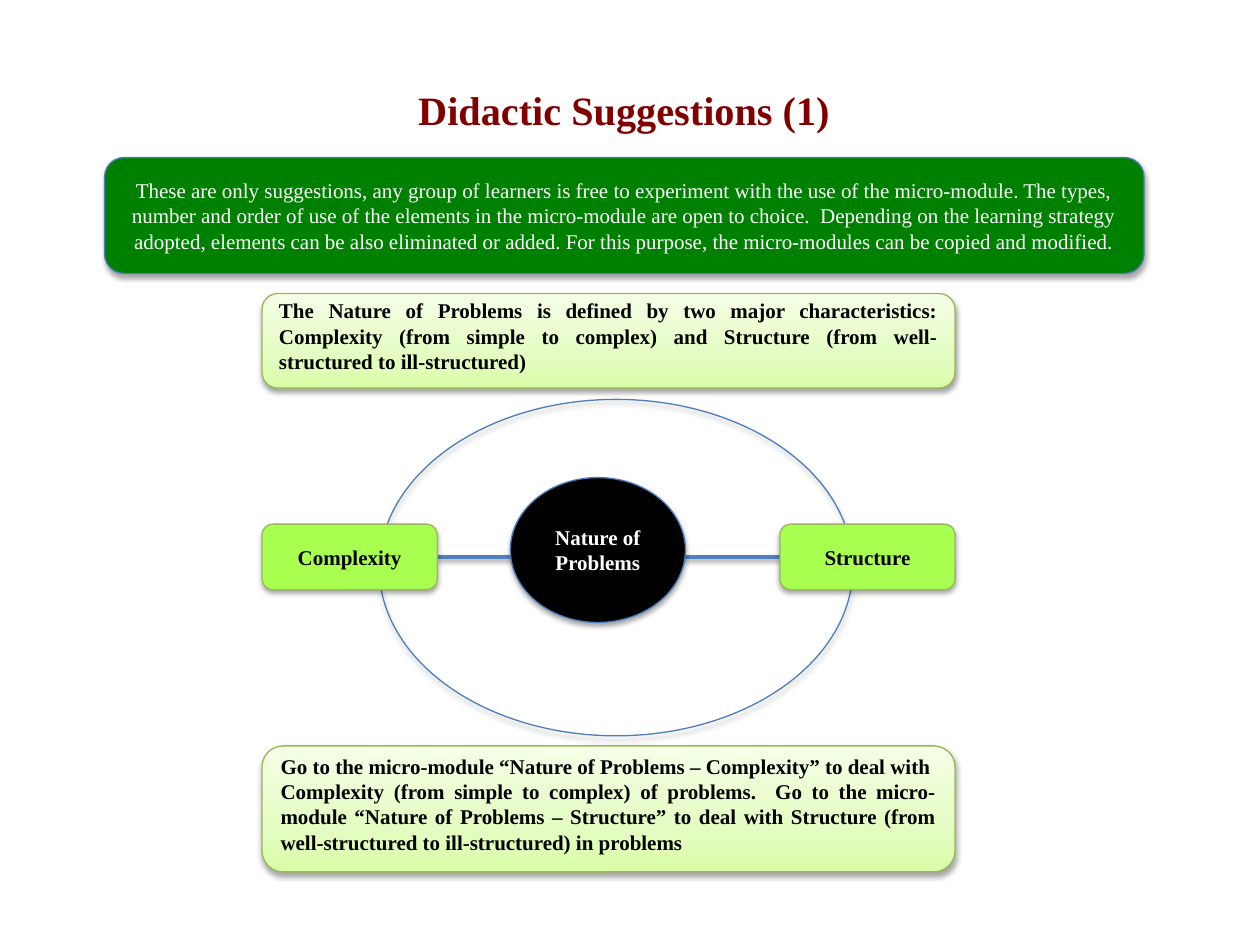
from dataclasses import dataclass

from lxml import etree
from pptx import Presentation
from pptx.dml.color import RGBColor
from pptx.enum.shapes import MSO_CONNECTOR, MSO_SHAPE
from pptx.enum.text import MSO_ANCHOR, PP_ALIGN
from pptx.oxml.ns import qn
from pptx.util import Inches, Pt

ROUNDED, OVAL = MSO_SHAPE.ROUNDED_RECTANGLE, MSO_SHAPE.OVAL
STRAIGHT = MSO_CONNECTOR.STRAIGHT
MIDDLE = MSO_ANCHOR.MIDDLE
CENTER, JUSTIFY = PP_ALIGN.CENTER, PP_ALIGN.JUSTIFY
LEFT_SIDE, RIGHT_SIDE = 1, 3


@dataclass(frozen=True)
class Theme:
    font: str = "Times New Roman"
    title_size: float = 23
    body_size: float = 12
    outline_width: float = 0.75
    link_width: float = 2
    title: str = "800000"
    notice: str = "008000"
    hub: str = "000000"
    label: str = "A8FF50"
    panel: tuple = ((0, "DAFDA7"), (35, "E4FCC2"), (100, "F5FFE7"))
    blue_outline: str = "4B7EBC"
    green_outline: str = "98B955"
    link: str = "4F81BD"
    dark_text: str = "000000"
    light_text: str = "FFFFFF"


THEME = Theme()


def rgb(value):
    return RGBColor.from_string(value)


def add_shadow(shape, opacity=35, blur=3.1, distance=1.8):
    """Give the shape a soft shadow falling straight down."""
    effects = etree.SubElement(shape._element.spPr, qn("a:effectLst"))
    shadow = etree.SubElement(
        effects, qn("a:outerShdw"), blurRad=str(Pt(blur)),
        dist=str(Pt(distance)), dir="5400000", rotWithShape="0")
    color = etree.SubElement(shadow, qn("a:srgbClr"), val="000000")
    etree.SubElement(color, qn("a:alpha"), val=str(opacity * 1000))


def fill_upward(shape, stops):
    """Fill with a gradient whose first stop lies at the bottom."""
    shape.fill.gradient()
    shape.fill.gradient_angle = 90
    stop_list = shape._element.spPr.find(".//" + qn("a:gsLst"))
    for old_stop in list(stop_list):
        stop_list.remove(old_stop)
    for position, color in stops:
        stop = etree.SubElement(stop_list, qn("a:gs"), pos=str(position * 1000))
        etree.SubElement(stop, qn("a:srgbClr"), val=color)


def write(shape, text, color, size=THEME.body_size, bold=True, align=CENTER):
    frame = shape.text_frame
    frame.word_wrap = True
    frame.vertical_anchor = MIDDLE
    frame.text = text
    paragraph = frame.paragraphs[0]
    paragraph.alignment = align
    font = paragraph.runs[0].font
    font.name, font.size, font.bold = THEME.font, Pt(size), bold
    font.color.rgb = rgb(color)


def add_outlined(slide, kind, box, outline, fill=None):
    shape = slide.shapes.add_shape(kind, *map(Inches, box))
    if fill is None:
        shape.fill.background()
    elif isinstance(fill, tuple):
        fill_upward(shape, fill)
    else:
        shape.fill.solid()
        shape.fill.fore_color.rgb = rgb(fill)
    shape.line.color.rgb = rgb(outline)
    shape.line.width = Pt(THEME.outline_width)
    add_shadow(shape)
    return shape


def add_title(slide, box, text):
    title = slide.shapes.title
    title.left, title.top, title.width, title.height = map(Inches, box)
    write(title, text, THEME.title, THEME.title_size)


def add_notice(slide, box, text):
    notice = add_outlined(slide, ROUNDED, box, THEME.blue_outline, THEME.notice)
    write(notice, text, THEME.light_text, bold=False)


def add_panel(slide, box, text):
    panel = add_outlined(slide, ROUNDED, box, THEME.green_outline, THEME.panel)
    write(panel, text, THEME.dark_text, align=JUSTIFY)
    panel.text_frame.margin_top = 0
    panel.text_frame.margin_bottom = Inches(0.08)


def add_diagram(slide, box, hub_text, left_text, right_text):
    """A hub inside a ring, linked to a label at each side of the box."""
    left, top, width, height = box
    label_width, label_height = 1.39, 0.52
    label_top = top + 0.99

    link = slide.shapes.add_connector(STRAIGHT, 0, 0, 0, 0)
    link.line.color.rgb = rgb(THEME.link)
    link.line.width = Pt(THEME.link_width)
    add_shadow(link, opacity=38, distance=1.6)

    hub = add_outlined(slide, OVAL, (left + 1.97, top + 0.62, label_width, 1.15),
                       THEME.blue_outline, THEME.hub)
    write(hub, hub_text, THEME.light_text)
    add_outlined(slide, OVAL, (left + 0.93, top, 3.76, height),
                 THEME.blue_outline)

    labels = []
    for text, x in ((left_text, left),
                    (right_text, left + width - label_width)):
        label = add_outlined(slide, ROUNDED,
                             (x, label_top, label_width, label_height),
                             THEME.green_outline, THEME.label)
        write(label, text, THEME.dark_text)
        labels.append(label)
    link.begin_connect(labels[0], RIGHT_SIDE)
    link.end_connect(labels[1], LEFT_SIDE)


def main():
    deck = Presentation()
    deck.slide_width, deck.slide_height = Inches(10), Inches(7.5)
    slide = deck.slides.add_slide(deck.slide_layouts.get_by_name("Title Only"))
    column_left, column_width = 2.08, 5.5

    add_title(slide, (2.33, 0.58, 5.25, 0.58), "Didactic Suggestions (1)")
    add_notice(
        slide, (0.83, 1.25, 8.25, 0.92),
        "These are only suggestions, any group of learners is free to "
        "experiment with the use of the micro-module. The types, number and "
        "order of use of the elements in the micro-module are open to choice.  "
        "Depending on the learning strategy adopted, elements can be also "
        "eliminated or added. For this purpose, the micro-modules can be "
        "copied and modified.")
    add_diagram(slide, (column_left, 3.17, column_width, 2.67),
                "Nature of Problems", "Complexity", "Structure")
    add_panel(
        slide, (column_left, 2.33, column_width, 0.75),
        "The Nature of Problems is defined by two major characteristics: "
        "Complexity (from simple to complex) and Structure (from "
        "well-structured to ill-structured)")
    add_panel(
        slide, (column_left, 5.92, column_width, 1),
        "Go to the micro-module “Nature of Problems – Complexity” to deal with  "
        "Complexity (from simple to complex) of problems.  Go to the "
        "micro-module “Nature of Problems – Structure” to deal with Structure "
        "(from well-structured to ill-structured) in problems")
    deck.save("out.pptx")


if __name__ == "__main__":
    main()
